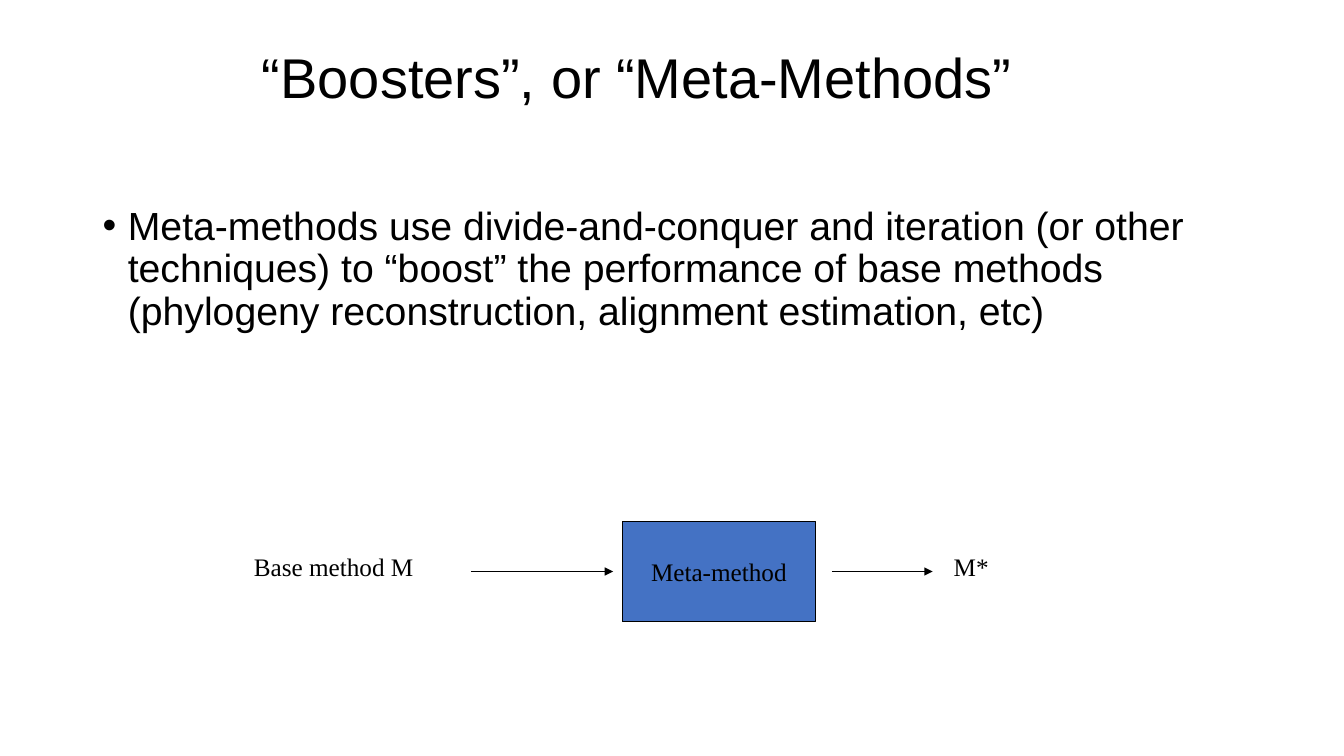
from lxml import etree
from pptx import Presentation, util as u
from pptx.dml.color import RGBColor
from pptx.enum import shapes, text
from pptx.oxml.ns import qn

BLACK, BLUE = "000000", "4472C4"
SANS, SERIF = "Arial", "Times New Roman"


def color(hex_code):
    return RGBColor.from_string(hex_code)


def inches(*lengths):
    return [u.Inches(length) for length in lengths]


def write(shape, words, size, font):
    para = shape.text_frame.paragraphs[0]
    para.text = words
    para.font.size = u.Pt(size)
    para.font.name = font
    para.font.color.rgb = color(BLACK)
    return para


def add_text(page, box, words, size, font):
    shape = page.shapes.add_textbox(*inches(*box))
    shape.text_frame.word_wrap = True
    return shape, write(shape, words, size, font)


def add_title(page, box, words):
    shape, para = add_text(page, box, words, 40, SANS)
    shape.text_frame.vertical_anchor = text.MSO_ANCHOR.MIDDLE
    para.line_spacing = 0.9


def add_bullet(page, box, words):
    shape, para = add_text(page, box, "", 28, SANS)
    properties = para._p.get_or_add_pPr()
    properties.set("marL", str(u.Inches(0.25)))
    properties.set("indent", str(u.Inches(-0.25)))
    etree.SubElement(properties, qn("a:buFont")).set("typeface", SANS)
    etree.SubElement(properties, qn("a:buChar")).set("char", "•")
    # The bullet elements must precede the font defaults in the paragraph.
    defaults = properties.find(qn("a:defRPr"))
    properties.append(defaults)
    para.line_spacing = 0.9
    write(shape, words, 28, SANS)


def add_arrow(page, start, end, y):
    arrow = page.shapes.add_connector(
        shapes.MSO_CONNECTOR.STRAIGHT, *inches(start, y, end, y))
    arrow.line.color.rgb = color(BLACK)
    arrow.line.width = u.Pt(0.75)
    etree.SubElement(arrow.line._get_or_add_ln(), qn("a:tailEnd")).set("type", "triangle")
    etree.SubElement(arrow._element.spPr, qn("a:effectLst"))


def add_process(page, box, words):
    shape = page.shapes.add_shape(shapes.MSO_SHAPE.RECTANGLE, *inches(*box))
    shape.shadow.inherit = False
    shape.fill.solid()
    shape.fill.fore_color.rgb = color(BLUE)
    shape.line.color.rgb = color(BLACK)
    shape.line.width = u.Pt(0.75)
    shape.text_frame.word_wrap = False
    shape.text_frame.vertical_anchor = text.MSO_ANCHOR.MIDDLE
    write(shape, words, 18, SERIF).alignment = text.PP_ALIGN.CENTER


def add_flow(page, box):
    """Draw input, process and output along the middle of the box."""
    left, top, width, height = box
    middle = top + height / 2
    add_process(page, (left + 3.75, top, 1.92, height), "Meta-method")
    for start, end in ((2.25, 3.66), (5.83, 6.83)):
        add_arrow(page, left + start, left + end, middle)
    for start, label_width, words in ((0, 2.58, "Base method M"), (6.94, width - 6.94, "M*")):
        add_text(page, (left + start, middle - 0.25, label_width, 0.4), words, 18, SERIF)


def main():
    deck = Presentation()
    deck.slide_width, deck.slide_height = inches(13.33, 7.5)
    page = deck.slides.add_slide(deck.slide_layouts[6])
    add_title(page, (2.5, 0.17, 8.5, 1.25), "“Boosters”, or “Meta-Methods”")
    add_bullet(page, (0.92, 2, 11.5, 2.5),
               "Meta-methods use divide-and-conquer and iteration (or other techniques) "
               "to “boost” the performance of base methods "
               "(phylogeny reconstruction, alignment estimation, etc)")
    add_flow(page, (2.42, 5.17, 8.83, 1))
    deck.save("out.pptx")


if __name__ == "__main__":
    main()
